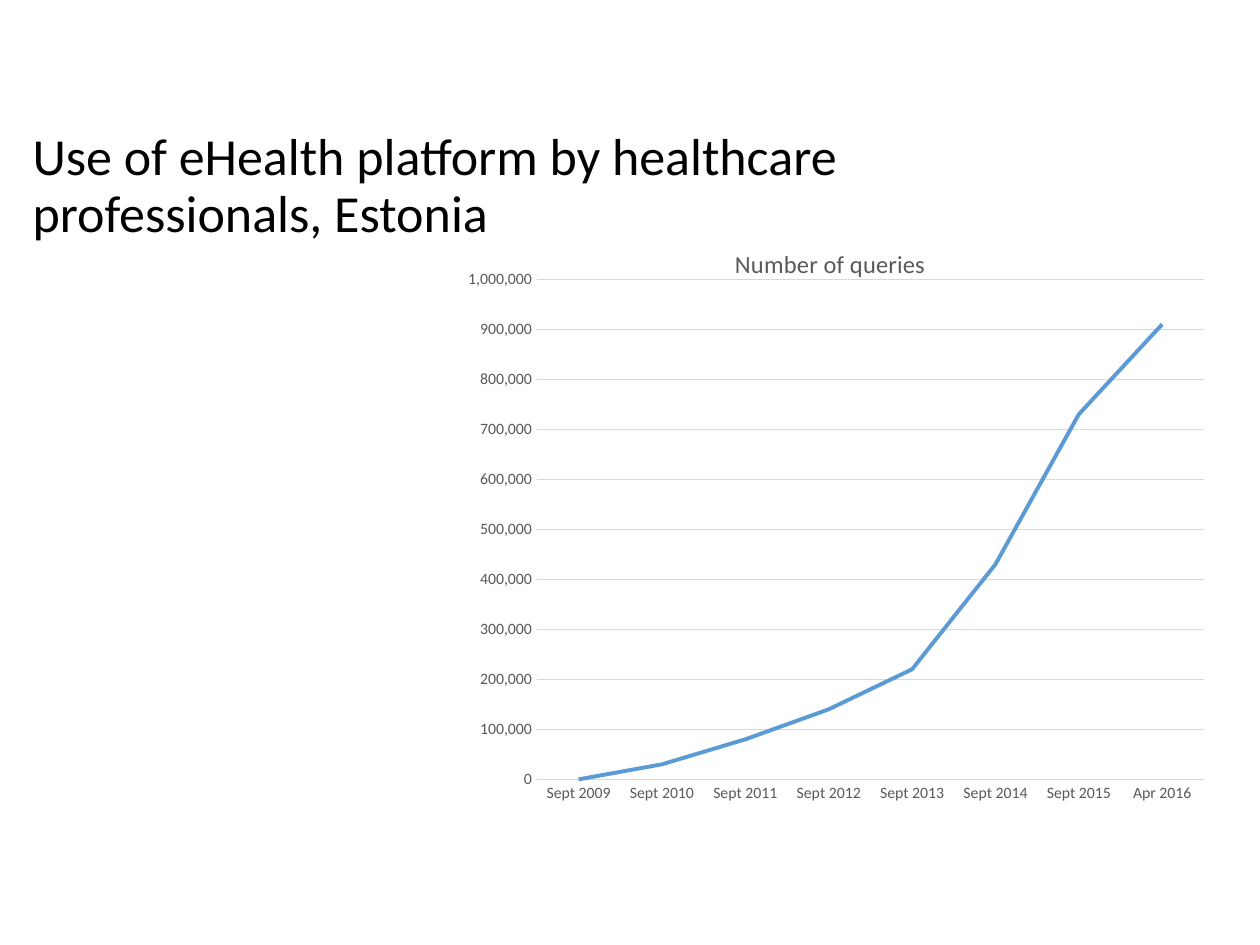
from lxml import etree
from pptx import Presentation
from pptx.chart.data import CategoryChartData
from pptx.dml.color import RGBColor
from pptx.enum.chart import XL_CHART_TYPE, XL_TICK_MARK
from pptx.enum.text import MSO_ANCHOR
from pptx.oxml import parse_xml
from pptx.oxml.ns import nsdecls, qn
from pptx.util import Inches, Pt

LINE = XL_CHART_TYPE.LINE
NO_TICK = XL_TICK_MARK.NONE
MIDDLE = MSO_ANCHOR.MIDDLE
BLACK = RGBColor(0, 0, 0)
GRAY = RGBColor(0x59, 0x59, 0x59)
LIGHT_GRAY = RGBColor(0xD9, 0xD9, 0xD9)
BLUE = RGBColor(0x5B, 0x9B, 0xD5)
FONT = "Calibri"

QUERIES = {
    "Sept 2009": 0,
    "Sept 2010": 30000,
    "Sept 2011": 80000,
    "Sept 2012": 140000,
    "Sept 2013": 220000,
    "Sept 2014": 430000,
    "Sept 2015": 730000,
    "Apr 2016": 910000,
}
PLOT_LAYOUT = {"x": 0.108, "y": 0.095, "w": 0.892, "h": 0.863}


def set_font(font, size, color):
    font.name = FONT
    font.size = Pt(size)
    font.bold = False
    font.color.rgb = color


prs = Presentation()
prs.slide_width = Inches(10)
prs.slide_height = Inches(7.5)
s = prs.slides.add_slide(prs.slide_layouts[6])

# Title
tf = s.shapes.add_textbox(Inches(0.16), Inches(0.94), Inches(8.62), Inches(1.09)).text_frame
tf.word_wrap = True
tf.vertical_anchor = MIDDLE
p = tf.paragraphs[0]
p.line_spacing = 0.9
r = p.add_run()
r.text = "Use of eHealth platform by healthcare professionals, Estonia"
set_font(r.font, 29.7, BLACK)

# Line chart
data = CategoryChartData(number_format="#,##0")
data.categories = list(QUERIES)
data.add_series("Number of queries", list(QUERIES.values()))
chart = s.shapes.add_chart(
    LINE, Inches(3.62), Inches(1.78), Inches(5.94), Inches(4.6), data
).chart
set_font(chart.font, 10, BLACK)
chart.has_legend = False

chart.has_title = True
chart.chart_title.include_in_layout = False
r = chart.chart_title.text_frame.paragraphs[0].add_run()
r.text = "Number of queries"
set_font(r.font, 14, GRAY)

cat_axis, val_axis = chart.category_axis, chart.value_axis
for axis in (cat_axis, val_axis):
    axis.major_tick_mark = NO_TICK
    axis.minor_tick_mark = NO_TICK
    set_font(axis.tick_labels.font, 9, GRAY)

val_axis.minimum_scale = 0
val_axis.maximum_scale = 1000000
val_axis.major_unit = 100000
val_axis.tick_labels.number_format = "#,##0"
val_axis.tick_labels.number_format_is_linked = False
val_axis.format.line.fill.background()
for line in (cat_axis.format.line, val_axis.major_gridlines.format.line):
    line.color.rgb = LIGHT_GRAY
    line.width = Pt(0.75)

plot = chart.plots[0]
plot.vary_by_categories = False
series = plot.series[0]
series.smooth = False
series.format.line.color.rgb = BLUE
series.format.line.width = Pt(2.25)

# Fixed inner plot area
plot_area = chart.element.find(".//" + qn("c:plotArea"))
old_layout = plot_area.find(qn("c:layout"))
if old_layout is not None:
    plot_area.remove(old_layout)
layout = parse_xml(f"<c:layout {nsdecls('c')}><c:manualLayout/></c:layout>")
settings = {"layoutTarget": "inner", "xMode": "edge", "yMode": "edge", **PLOT_LAYOUT}
for name, value in settings.items():
    etree.SubElement(layout[0], qn(f"c:{name}")).set("val", str(value))
plot_area.insert(0, layout)

prs.save("out.pptx")
